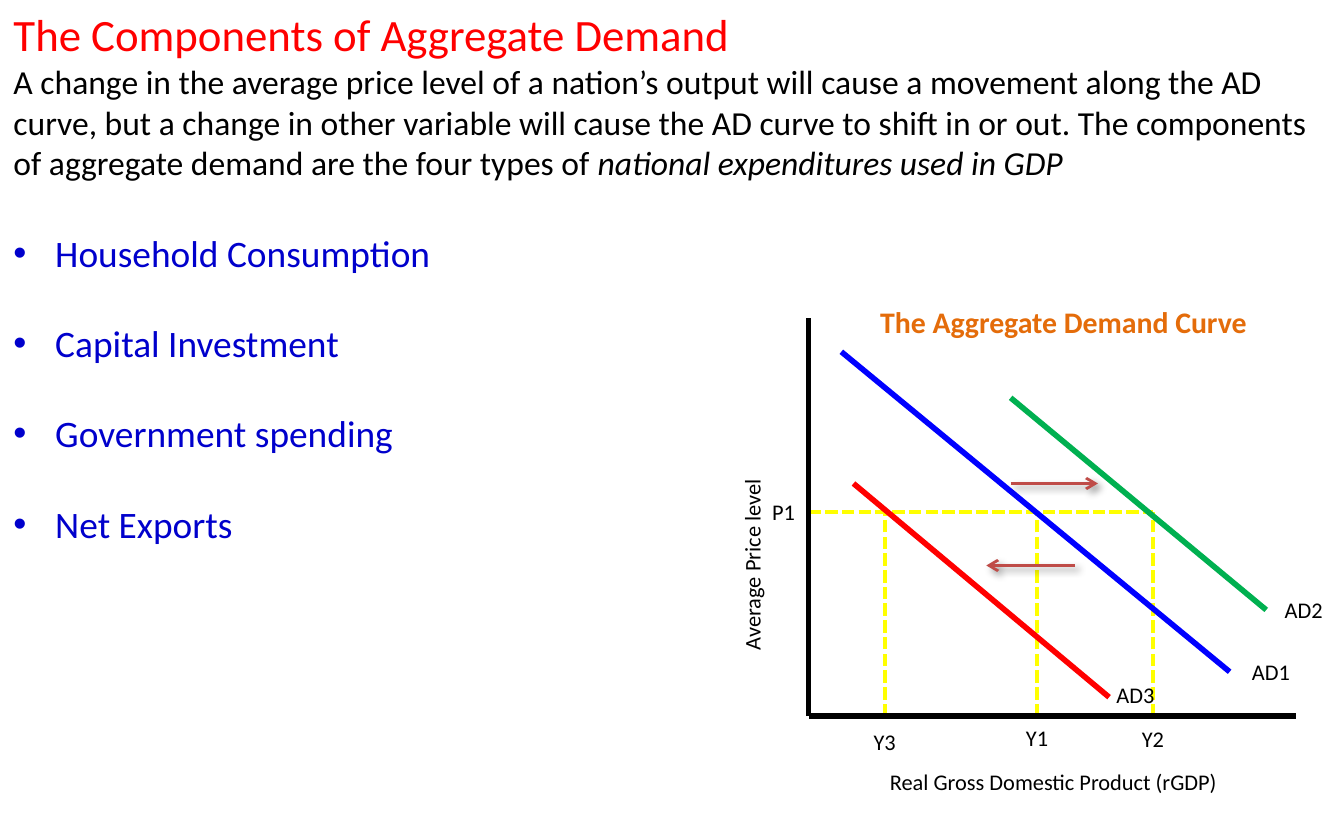
from dataclasses import dataclass

from lxml.etree import SubElement
from pptx import Presentation
from pptx.dml.color import RGBColor
from pptx.enum.dml import MSO_LINE
from pptx.enum.shapes import MSO_CONNECTOR
from pptx.enum.text import MSO_ANCHOR as Anchor, MSO_AUTO_SIZE as AutoSize, PP_ALIGN as Align
from pptx.oxml.ns import qn
from pptx.util import Cm, Pt


@dataclass(frozen=True)
class Theme:
    font: str = "Calibri"
    red: str = "FF0000"
    black: str = "000000"
    bullet_blue: str = "0000CC"
    curve_blue: str = "0000FF"
    green: str = "00B050"
    yellow: str = "FFFF00"
    orange: str = "E46C0A"
    arrow: str = "BF4C48"
    title: float = 24
    intro: float = 18
    bullet: float = 20
    heading: float = 16
    label: float = 12


THEME = Theme()

TITLE = "The Components of Aggregate Demand"
INTRO = (
    "A change in the average price level of a nation’s output will cause a movement along "
    "the AD curve, but a change in other variable will cause the AD curve to shift in or out. "
    "The components of aggregate demand are the four types of "
)
INTRO_ITALIC = "national expenditures used in GDP"
COMPONENTS = ["Household Consumption", "Capital Investment", "Government spending", "Net Exports"]

# Diagram geometry in centimetres
AXIS_LEFT, AXIS_RIGHT, AXIS_TOP, AXIS_BOTTOM = 15.28, 24.49, 6.02, 13.54
PRICE = 9.68
OUTPUTS = [("Y2", 21.79, 13.97), ("Y3", 16.72, 14.02), ("Y1", 19.6, 13.94)]
CURVES = [  # name, colour, start, end, label centre
    ("AD1", THEME.curve_blue, (15.9, 6.65), (23.24, 12.7), (24.02, 12.7)),
    ("AD2", THEME.green, (19.1, 7.52), (23.93, 11.53), (24.64, 11.53)),
    ("AD3", THEME.red, (16.13, 9.14), (20.96, 13.18), (21.46, 13.13)),
]
SHIFTS = [((19.1, 9.14), (20.75, 9.14)), ((20.32, 10.69), (18.64, 10.69))]


def style(span, size, color, bold=None, italic=None):
    span.font.name = THEME.font
    span.font.size = Pt(size)
    span.font.color.rgb = RGBColor.from_string(color)
    span.font.bold = bold
    span.font.italic = italic


def place(shape, left, top, width, height):
    shape.left, shape.top, shape.width, shape.height = map(Cm, (left, top, width, height))


def set_bullet(para, symbol=None, indent=0):
    properties = para._p.get_or_add_pPr()
    properties.set("marL", str(Cm(indent)))
    properties.set("indent", str(-Cm(indent)))
    if symbol:
        SubElement(properties, qn("a:buChar"), char=symbol)
    else:
        SubElement(properties, qn("a:buNone"))


def add_line(page, start, end, color, width, dash=None):
    line = page.shapes.add_connector(MSO_CONNECTOR.STRAIGHT, *map(Cm, (*start, *end)))
    line.line.color.rgb = RGBColor.from_string(color)
    line.line.width = Pt(width)
    if dash:
        line.line.dash_style = dash
    SubElement(line._element.spPr, qn("a:effectLst"))
    return line


def add_shift_arrow(page, start, end):
    arrow = add_line(page, start, end, THEME.arrow, 1.5)
    SubElement(arrow.line._get_or_add_ln(), qn("a:tailEnd"), type="arrow")
    effects = arrow._element.spPr.find(qn("a:effectLst"))
    shadow = SubElement(effects, qn("a:outerShdw"), blurRad=str(Pt(4)), dist=str(Pt(3)),
                        dir=str(45 * 60000), rotWithShape="0")
    color = SubElement(shadow, qn("a:srgbClr"), val=THEME.black)
    SubElement(color, qn("a:alpha"), val="40000")


def add_label(page, text, center, width=1.52, height=0.76, size=THEME.label,
              color=THEME.black, bold=None, align=Align.CENTER, rotation=0):
    x, y = center
    box = page.shapes.add_textbox(Cm(x - width / 2), Cm(y - height / 2), Cm(width), Cm(height))
    box.rotation = rotation
    box.text_frame.word_wrap = True
    para = box.text_frame.paragraphs[0]
    para.text = text
    para.alignment = align
    style(para.runs[0], size, color, bold)


def fill_text(page):
    title, body = page.shapes.title, page.placeholders[1]
    place(title, 0, 0, 25.4, 1.2)
    place(body, 0, 1.03, 25.4, 9.43)
    for box in (title, body):
        box.text_frame.auto_size = AutoSize.NONE
        box.text_frame.vertical_anchor = Anchor.TOP
    title.text_frame.text = TITLE
    heading = title.text_frame.paragraphs[0]
    heading.alignment = Align.LEFT
    style(heading.runs[0], THEME.title, THEME.red)

    body.text_frame.text = "\n".join([INTRO, *COMPONENTS])
    intro, *bullets = body.text_frame.paragraphs
    intro.space_before = Pt(0)
    set_bullet(intro)
    intro.add_run().text = INTRO_ITALIC
    for span, italic in zip(intro.runs, (None, True)):
        style(span, THEME.intro, THEME.black, italic=italic)
    for number, para in enumerate(bullets):
        para.space_before = Pt(24.4 if number else 25.6)
        set_bullet(para, "•", 0.79)
        style(para.runs[0], THEME.bullet, THEME.bullet_blue)


def draw_diagram(page):
    corner = (AXIS_LEFT, AXIS_BOTTOM)
    guides = [((x, AXIS_BOTTOM), (x, PRICE)) for _, x, _ in OUTPUTS]
    guides.append(((AXIS_LEFT, PRICE), (OUTPUTS[0][1], PRICE)))
    for start, end in guides:
        add_line(page, start, end, THEME.yellow, 2.25, MSO_LINE.SQUARE_DOT)
    for end in ((AXIS_LEFT, AXIS_TOP), (AXIS_RIGHT, AXIS_BOTTOM)):
        add_line(page, corner, end, THEME.black, 3)

    add_label(page, "Average Price level", (14.21, 9.58), 5.92, align=Align.LEFT, rotation=270)
    add_label(page, "Real Gross Domestic Product (rGDP)", (19.91, 14.78), 9.7)
    add_label(page, "The Aggregate Demand Curve", (20.1, 6.08), 7.49, 0.94,
              THEME.heading, THEME.orange, True)
    for name, color, start, end, center in CURVES:
        add_line(page, start, end, color, 3)
        add_label(page, name, center)
    for name, x, y in OUTPUTS:
        add_label(page, name, (x, y))
    add_label(page, "P1", (14.81, PRICE))
    for start, end in SHIFTS:
        add_shift_arrow(page, start, end)


def main():
    deck = Presentation()
    deck.slide_width, deck.slide_height = Cm(25.4), Cm(15.88)
    page = deck.slides.add_slide(deck.slide_layouts[1])
    fill_text(page)
    draw_diagram(page)
    deck.save("out.pptx")


if __name__ == "__main__":
    main()
